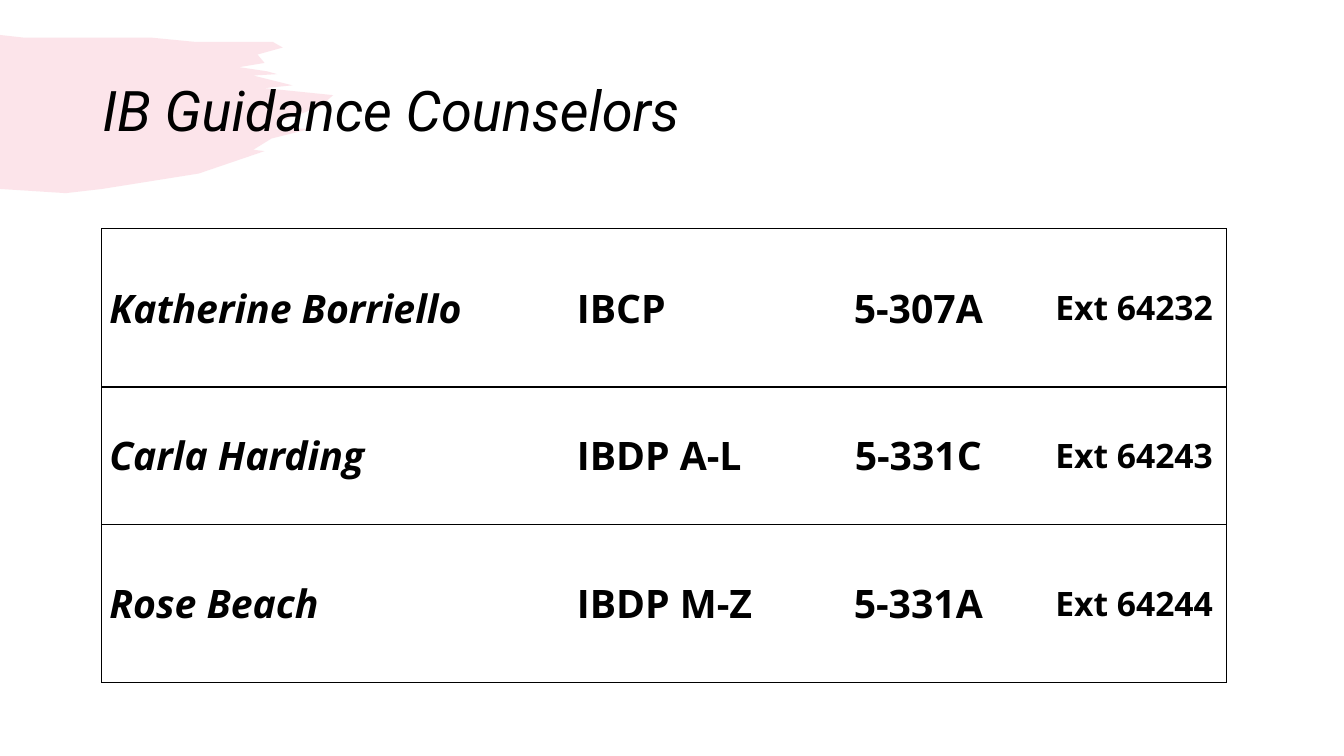
"""Build the IB Guidance Counselors slide: brush stroke, title and contact table."""
from lxml import etree
from pptx import Presentation, util as u
from pptx.dml.color import RGBColor
from pptx.enum import text
from pptx.oxml import ns

Pt = u.Pt
THEME = {
    "ink": RGBColor(0, 0, 0), "paper": RGBColor(255, 255, 255),
    "brush": RGBColor(0xF0, 0x7C, 0x98), "brush_alpha": 20000,
    "title": {"name": "Roboto", "size": Pt(40), "italic": True},
    "entry": {"name": "Open Sans", "size": Pt(28), "bold": True},
    "extension": {"size": Pt(24)},
}
BRUSH_OUTLINE = [
    (0, 25), (18, 27), (48, 27), (109, 27), (140, 30), (179, 30), (195, 30), (202, 34),
    (184, 39), (189, 45), (171, 48), (191, 51), (198, 53), (181, 54), (197, 58),
    (209, 61), (189, 63), (238, 68), (229, 76), (216, 81), (202, 86), (197, 92),
    (222, 92), (194, 99), (181, 107), (189, 108), (142, 124), (73, 135), (47, 138), (0, 135),
]
COUNSELORS = [
    ("Katherine Borriello", "IBCP", "5-307A", "", "Ext 64232"),
    ("Carla Harding", "IBDP A-L", "5-331C", "", "Ext 64243"),
    ("Rose Beach", "IBDP M-Z", "5-331A", "", "Ext 64244"),
    ("",) * 5,
]
COLUMN_WIDTHS = [334, 182, 134.5, 21, 132]
ROW_HEIGHTS = [113, 98, 113, 47.5]


def set_format(target, values):
    for name, value in values.items():
        setattr(target, name, value)


def add_border(cell, side, visible):
    edge = etree.SubElement(cell._tc.get_or_add_tcPr(), ns.qn(f"a:ln{side}"), w=str(Pt(1)))
    if visible:
        fill = etree.SubElement(edge, ns.qn("a:solidFill"))
        etree.SubElement(fill, ns.qn("a:srgbClr"), val=str(THEME["ink"]))
    else:
        etree.SubElement(edge, ns.qn("a:noFill"))


deck = Presentation()
set_format(deck, {"slide_width": Pt(960), "slide_height": Pt(540)})
slide = deck.slides.add_slide(deck.slide_layouts[5])

title = slide.shapes.title
set_format(title, {"left": Pt(66), "top": Pt(28.8), "width": Pt(828), "height": Pt(104.4)})
title.text_frame.text = "IB Guidance Counselors"
set_format(title.text_frame, {"vertical_anchor": text.MSO_ANCHOR.MIDDLE, "word_wrap": True,
                              "auto_size": text.MSO_AUTO_SIZE.NONE})
heading = title.text_frame.paragraphs[0]
set_format(heading, {"alignment": text.PP_ALIGN.LEFT, "line_spacing": 0.9})
set_format(heading.font, THEME["title"])
heading.font.color.rgb = THEME["ink"]

pen = slide.shapes.build_freeform(*BRUSH_OUTLINE[0], scale=Pt(1))
pen.add_line_segments(BRUSH_OUTLINE[1:], close=True)
brush = pen.convert_to_shape()
brush.shadow.inherit = False
brush.line.fill.background()
brush.fill.solid()
brush.fill.fore_color.rgb = THEME["brush"]
brush_colour = brush.element.spPr.find(".//" + ns.qn("a:srgbClr"))
etree.SubElement(brush_colour, ns.qn("a:alpha"), val=str(THEME["brush_alpha"]))
title.element.addprevious(brush.element)

directory = slide.shapes.add_table(len(ROW_HEIGHTS), len(COLUMN_WIDTHS), Pt(72.7), Pt(163.4),
                                   Pt(sum(COLUMN_WIDTHS)), Pt(sum(ROW_HEIGHTS))).table
set_format(directory, {"first_row": False, "horz_banding": False})
for column, width in zip(directory.columns, COLUMN_WIDTHS):
    column.width = Pt(width)
for row, height in zip(directory.rows, ROW_HEIGHTS):
    row.height = Pt(height)

last_row, last_column = len(ROW_HEIGHTS) - 1, len(COLUMN_WIDTHS) - 1
for r, counselor in enumerate(COUNSELORS):
    for c, entry in enumerate(counselor):
        cell = directory.cell(r, c)
        listed = r < last_row
        set_format(cell, {"vertical_anchor": text.MSO_ANCHOR.MIDDLE,
                          "margin_left": Pt(5.4), "margin_right": Pt(5.4),
                          "margin_top": Pt(3.6), "margin_bottom": Pt(3.6)})
        for side, visible in {"L": listed and c == 0, "R": listed and c == last_column,
                              "T": True, "B": listed}.items():
            add_border(cell, side, visible)
        if listed:
            cell.fill.background()
        else:
            cell.fill.solid()
            cell.fill.fore_color.rgb = THEME["paper"]
        if entry:
            cell.text = entry
            line = cell.text_frame.paragraphs[0]
            line.alignment = text.PP_ALIGN.CENTER if c >= 2 else text.PP_ALIGN.LEFT
            set_format(line.font, THEME["entry"] | {"italic": c == 0})
            if c == last_column:
                set_format(line.font, THEME["extension"])
            line.font.color.rgb = THEME["ink"]

deck.save("out.pptx")
